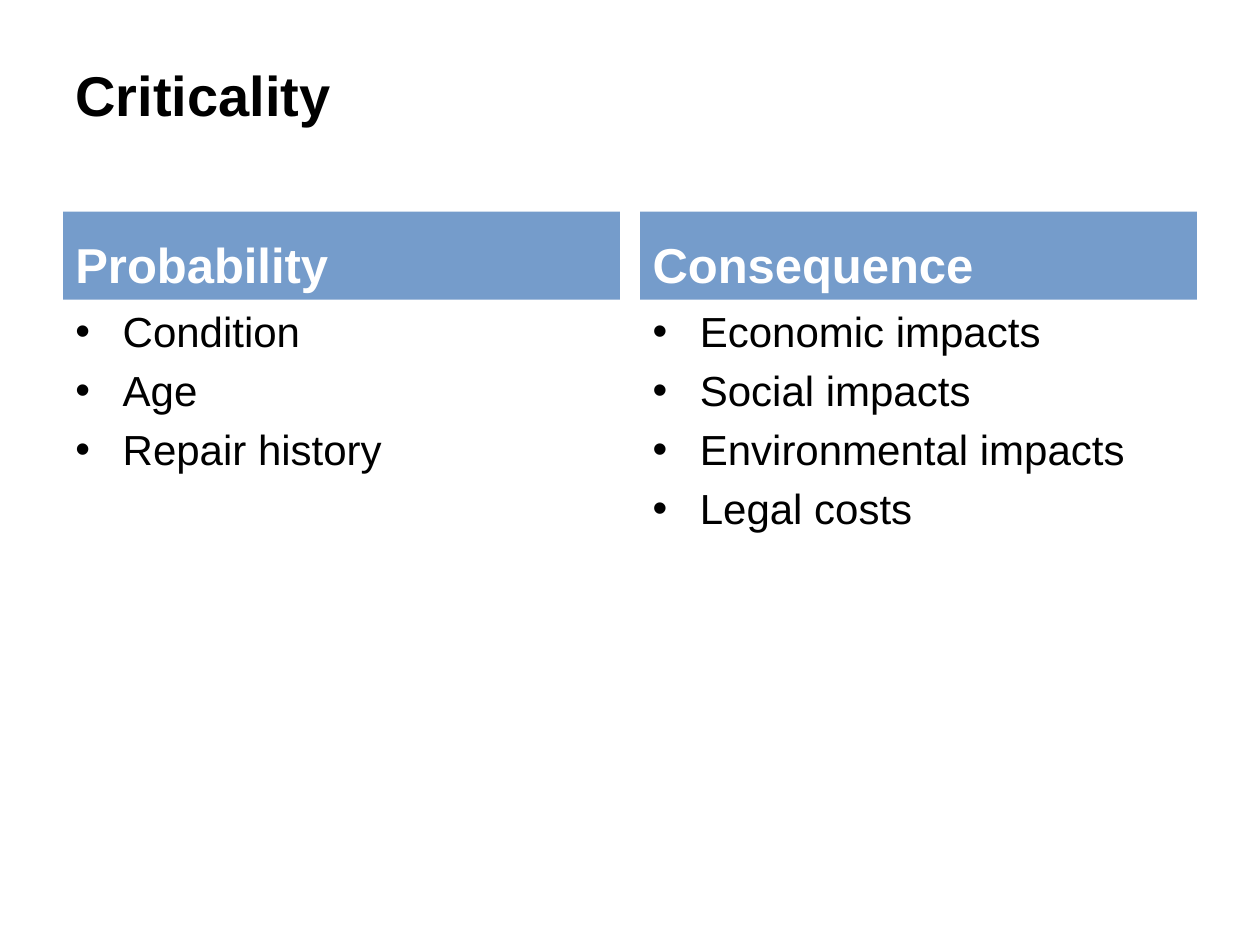
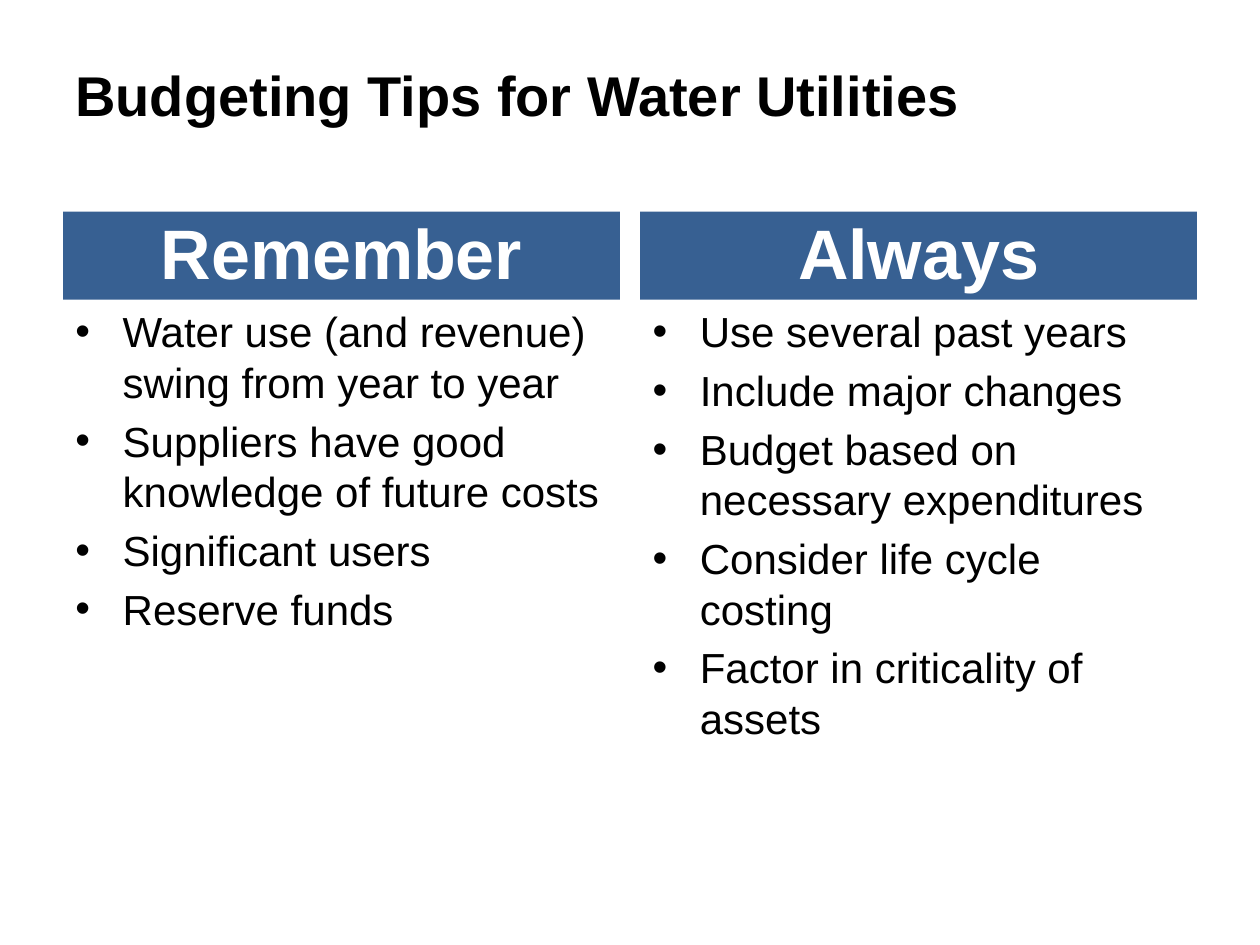
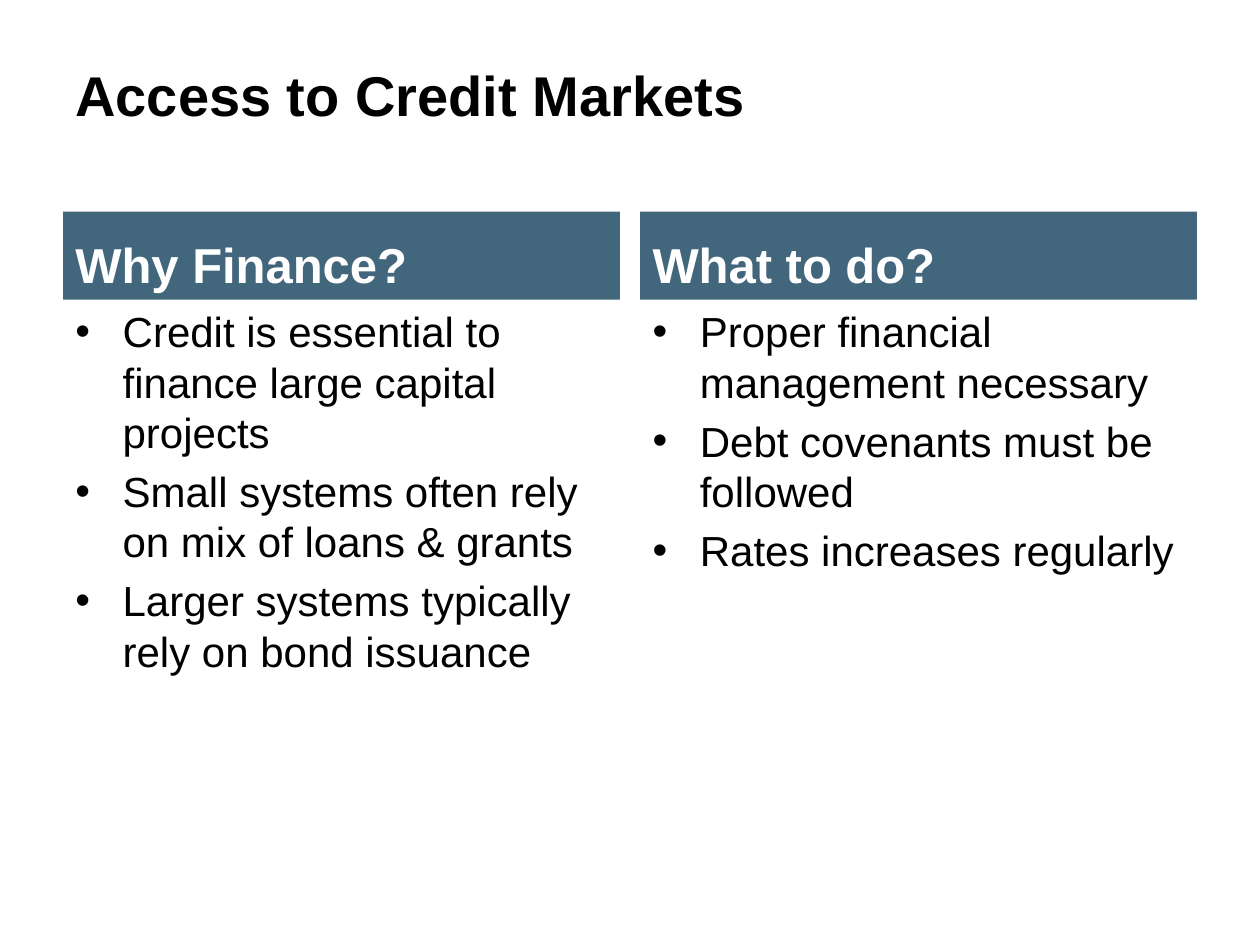
"""Build three two-column slides on budgeting for water utilities."""
import dataclasses

import lxml.etree
import pptx
import pptx.dml.color
import pptx.enum.shapes
import pptx.enum.text
import pptx.oxml.ns
import pptx.util

Pt = pptx.util.Pt
RGB = pptx.dml.color.RGBColor.from_string
Align = pptx.enum.text.PP_ALIGN
Anchor = pptx.enum.text.MSO_ANCHOR
Shape = pptx.enum.shapes.MSO_SHAPE


@dataclasses.dataclass(frozen=True)
class Theme:
    font: str = "Arial"
    ink: str = "000000"
    pale: str = "FFFFFF"
    blue: str = "4F81BD"
    navy: str = "376092"
    slate: str = "0E3B58"
    title: int = 32
    head: int = 28
    large: int = 40
    body: int = 24
    lead: float = 0.2
    indent: int = 27
    margin: int = 36
    width: int = 720
    height: int = 540
    column: float = 318.2


class Deck:
    def __init__(self, theme):
        self.theme = theme
        self.show = pptx.Presentation()
        self.show.slide_width = Pt(theme.width)
        self.show.slide_height = Pt(theme.height)
        self.slide = None

    def letter(self, frame, lines, size, color, bold=False, align=Align.LEFT, lead=0.0):
        frame.word_wrap = True
        for index, line in enumerate(lines):
            para = frame.add_paragraph() if index else frame.paragraphs[0]
            para.alignment = align
            para.space_before = Pt(size * lead)
            run = para.add_run()
            run.text = line
            run.font.name = self.theme.font
            run.font.size = Pt(size)
            run.font.bold = bold
            run.font.color.rgb = RGB(color)

    def text(self, left, top, width, height):
        box = self.slide.shapes.add_textbox(Pt(left), Pt(top), Pt(width), Pt(height))
        return box.text_frame

    def title(self, words):
        look = self.theme
        self.slide = self.show.slides.add_slide(self.show.slide_layouts[6])
        frame = self.text(look.margin, 8.6, look.width - 2 * look.margin, 90)
        frame.vertical_anchor = Anchor.MIDDLE
        self.letter(frame, [words], look.title, look.ink, bold=True)

    def band(self, left, words, fill, alpha, size, align):
        look = self.theme
        band = self.slide.shapes.add_shape(
            Shape.RECTANGLE, Pt(left), Pt(120.9), Pt(look.column), Pt(50.4))
        band.shadow.inherit = False
        band.line.fill.background()
        band.fill.solid()
        band.fill.fore_color.rgb = RGB(fill)
        if alpha < 100:
            tint = band.element.spPr.find(".//" + pptx.oxml.ns.qn("a:srgbClr"))
            lxml.etree.SubElement(
                tint, pptx.oxml.ns.qn("a:alpha"), val=str(alpha * 1000))
        band.text_frame.vertical_anchor = Anchor.BOTTOM
        self.letter(band.text_frame, [words], size, look.pale, True, align, look.lead)

    def bullets(self, left, lines):
        look = self.theme
        frame = self.text(left, 171.3, look.column, 311)
        self.letter(frame, lines, look.body, look.ink, lead=look.lead)
        for para in frame.paragraphs:
            props = para._p.get_or_add_pPr()
            props.set("marL", str(Pt(look.indent)))
            props.set("indent", str(-Pt(look.indent)))
            lxml.etree.SubElement(
                props, pptx.oxml.ns.qn("a:buFont"), typeface=look.font)
            lxml.etree.SubElement(props, pptx.oxml.ns.qn("a:buChar"), char="•")

    def pair(self, title, columns, fill, alpha=78, size=None, align=Align.LEFT):
        look = self.theme
        self.title(title)
        lefts = (look.margin, look.width - look.margin - look.column)
        for left, (head, lines) in zip(lefts, columns.items()):
            self.band(left, head, fill, alpha, size or look.head, align)
            self.bullets(left, lines)


def main():
    look = Theme()
    deck = Deck(look)
    deck.pair("Criticality", {
        "Probability": ["Condition", "Age", "Repair history"],
        "Consequence": ["Economic impacts", "Social impacts",
                        "Environmental impacts", "Legal costs"],
    }, look.blue)
    deck.pair("Budgeting Tips for Water Utilities", {
        "Remember": ["Water use (and revenue) swing from year to year",
                     "Suppliers have good knowledge of future costs",
                     "Significant users", "Reserve funds"],
        "Always": ["Use several past years", "Include major changes",
                   "Budget based on necessary expenditures",
                   "Consider life cycle costing",
                   "Factor in criticality of assets"],
    }, look.navy, 100, look.large, Align.CENTER)
    deck.pair("Access to Credit Markets", {
        "Why Finance?": ["Credit is essential to finance large capital projects",
                         "Small systems often rely on mix of loans & grants",
                         "Larger systems typically rely on bond issuance"],
        "What to do?": ["Proper financial management necessary",
                        "Debt covenants must be followed",
                        "Rates increases regularly"],
    }, look.slate)
    deck.show.save("out.pptx")


if __name__ == "__main__":
    main()
